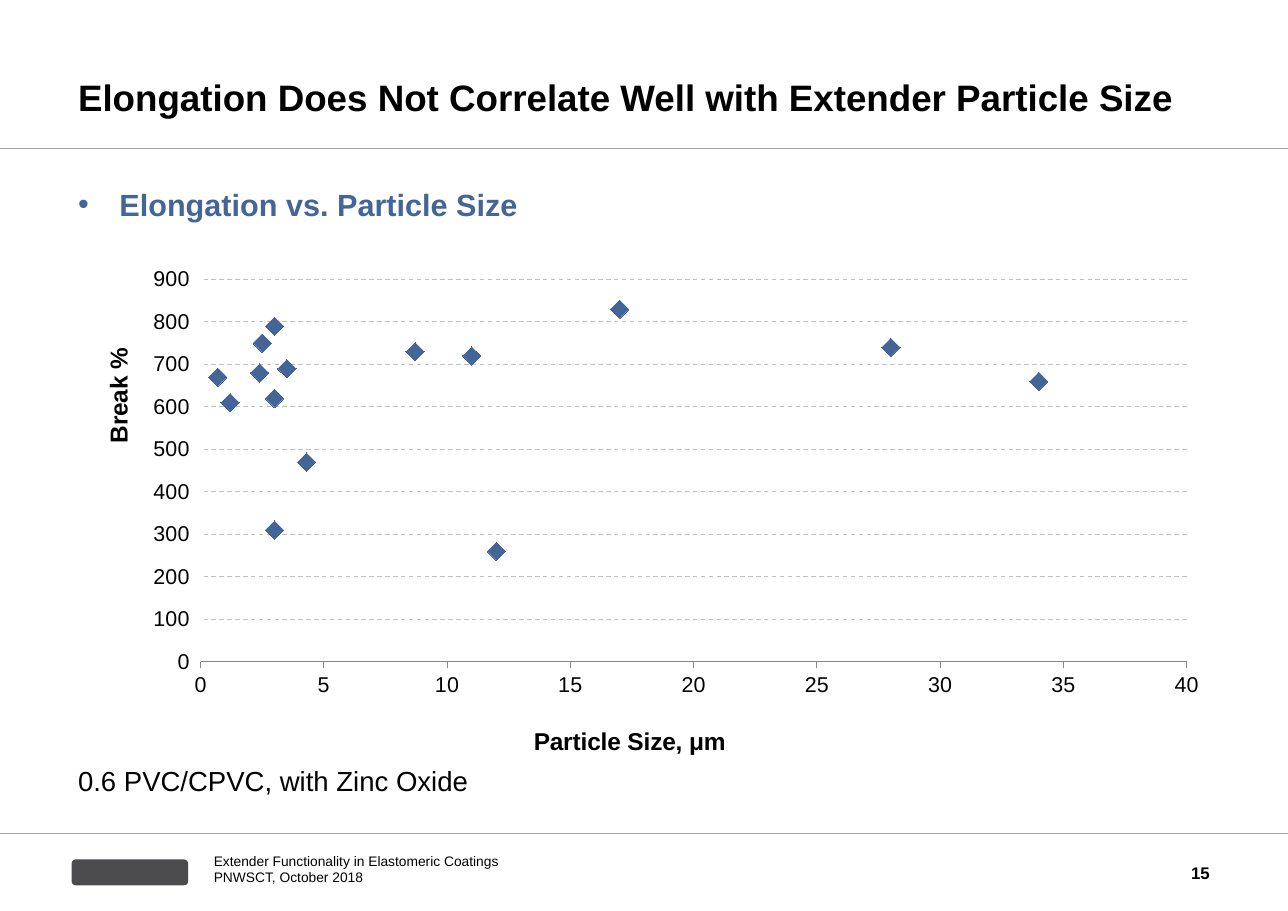
"""Build the slide on elongation against extender particle size."""
from dataclasses import dataclass

from lxml.etree import SubElement
from pptx import Presentation
from pptx.chart.data import XyChartData
from pptx.dml.color import RGBColor
from pptx.enum.chart import XL_CHART_TYPE as ChartType, XL_MARKER_STYLE as Marker, XL_TICK_MARK as Tick
from pptx.enum.dml import MSO_LINE_DASH_STYLE as Dash
from pptx.enum.shapes import MSO_CONNECTOR as Connector, MSO_SHAPE as Shape
from pptx.enum.text import MSO_ANCHOR as Anchor, MSO_AUTO_SIZE as AutoSize, PP_ALIGN as Align
from pptx.oxml import parse_xml
from pptx.oxml.ns import nsdecls, qn
from pptx.util import Cm, Pt

TITLE = "Elongation Does Not Correlate Well with Extender Particle Size"
SUBTITLE = "Elongation vs. Particle Size"
NOTE = "0.6 PVC/CPVC, with Zinc Oxide"
FOOTER = ["Extender Functionality in Elastomeric Coatings", "PNWSCT, October 2018"]
PAGE_NUMBER = "15"
SIZE_AXIS = {"title": "Particle Size, μm", "max": 40, "step": 5, "format": "General", "title_at": (0.4, 0.92)}
BREAK_AXIS = {"title": "Break %", "max": 900, "step": 100, "format": "0", "title_at": (0.02, 0.16)}
MEASUREMENTS = [
    (0.7, 670), (3, 310), (4.3, 470), (12, 260), (3, 790),
    (11, 720), (2.4, 680), (8.7, 730), (17, 830), (34, 660),
    (2.5, 750), (28, 740), (1.2, 610), (3, 620), (3.5, 690),
]
PLOT_AREA = (0.11, 0.03, 0.87, 0.77)


@dataclass(frozen=True)
class Theme:
    """Hold the colours and type sizes of the slide."""

    font: str = "Arial"
    ink: RGBColor = RGBColor(0, 0, 0)
    accent: RGBColor = RGBColor(0x43, 0x65, 0x97)
    rule: RGBColor = RGBColor(0xA6, 0xA6, 0xA6)
    grid: RGBColor = RGBColor(0xBF, 0xBF, 0xBF)
    axis: RGBColor = RGBColor(0x86, 0x86, 0x86)
    emblem: RGBColor = RGBColor(0x4B, 0x4B, 0x4D)
    title: int = 24
    subtitle: int = 20
    note: int = 18
    axis_title: int = 16
    chart: int = 14
    number: int = 11
    footer: int = 9


THEME = Theme()
PAGE_WIDTH, PAGE_HEIGHT = 29.7, 21
MARGIN = 1.8
CONTENT_WIDTH = PAGE_WIDTH - 2 * MARGIN
RULES = [(3.43, 0.75), (19.2, 0.5)]


def set_font(font, size, bold=False, color=THEME.ink):
    """Apply the theme font to a font object."""
    font.name, font.size, font.bold = THEME.font, Pt(size), bold
    font.color.rgb = color


def place(part, left, top, width, height):
    """Move a part to a position given in centimetres."""
    part.left, part.top, part.width, part.height = map(Cm, (left, top, width, height))


def write(part, lines, size, bold=False, color=THEME.ink, anchor=Anchor.MIDDLE, align=Align.LEFT, spacing=None):
    """Fill a text part without insets."""
    frame = part.text_frame
    frame.text = "\n".join(lines)
    frame.word_wrap, frame.auto_size, frame.vertical_anchor = True, AutoSize.NONE, anchor
    frame.margin_left = frame.margin_top = frame.margin_right = frame.margin_bottom = 0
    for paragraph in frame.paragraphs:
        paragraph.alignment = align
        paragraph.space_before = Pt(0)
        if spacing:
            paragraph.line_spacing = Pt(spacing)
        set_font(paragraph.font, size, bold, color)


def add_text(slide, box, lines, size, **style):
    """Add a text box."""
    write(slide.shapes.add_textbox(*map(Cm, box)), lines, size, **style)


def set_layout(parent, index, position, target=""):
    """Give a chart part a manual layout."""
    for old in parent.findall(qn("c:layout")):
        parent.remove(old)
    layout = parse_xml(f"<c:layout {nsdecls('c')}><c:manualLayout/></c:layout>")
    settings = [("layoutTarget", target)] if target else []
    settings += [("xMode", "edge"), ("yMode", "edge"), *zip("xywh", position)]
    for tag, value in settings:
        SubElement(layout[0], qn(f"c:{tag}")).set("val", str(value))
    parent.insert(index, layout)


def style_axis(axis, content):
    """Set scale, labels and title of an axis."""
    axis.minimum_scale, axis.maximum_scale, axis.major_unit = 0, content["max"], content["step"]
    axis.major_tick_mark, axis.minor_tick_mark = Tick.OUTSIDE, Tick.NONE
    axis.tick_labels.number_format = content["format"]
    axis.tick_labels.number_format_is_linked = False
    set_font(axis.tick_labels.font, THEME.chart)
    heading = axis.axis_title.text_frame
    heading.text = content["title"]
    set_font(heading.paragraphs[0].font, THEME.axis_title, True)
    set_layout(axis.axis_title._element, 1, content["title_at"])
    return heading


def add_scatter(slide):
    """Add the scatter chart."""
    data = XyChartData()
    points = data.add_series("Elongation")
    for particle_size, elongation in MEASUREMENTS:
        points.add_data_point(particle_size, elongation)
    box = map(Cm, (1.75, 6.1, 26.14, 11.48))
    chart = slide.shapes.add_chart(ChartType.XY_SCATTER, *box, data).chart
    chart.has_title = chart.has_legend = False
    set_font(chart.font, THEME.chart)
    plot = chart.plots[0]
    plot.vary_by_categories = False
    set_layout(plot._element.getparent(), 0, PLOT_AREA, "inner")

    series = plot.series[0]
    series.smooth = False
    series.format.line.fill.background()
    series.marker.style, series.marker.size = Marker.DIAMOND, 12
    marker = series.marker.format
    marker.fill.solid()
    marker.fill.fore_color.rgb = marker.line.color.rgb = THEME.accent

    style_axis(chart.category_axis, SIZE_AXIS)
    chart.category_axis.has_major_gridlines = False
    chart.category_axis.format.line.color.rgb = THEME.axis
    break_heading = style_axis(chart.value_axis, BREAK_AXIS)
    break_heading._txBody.bodyPr.set("rot", "-5400000")
    break_heading._txBody.bodyPr.set("vert", "horz")
    chart.value_axis.format.line.fill.background()
    grid = chart.value_axis.major_gridlines.format.line
    grid.color.rgb, grid.width, grid.dash_style = THEME.grid, Pt(0.75), Dash.DASH


def add_rule(slide, top, weight):
    """Add a line across the whole page."""
    rule = slide.shapes.add_connector(Connector.STRAIGHT, 0, Cm(top), Cm(PAGE_WIDTH), Cm(top))
    rule.line.color.rgb, rule.line.width = THEME.rule, Pt(weight)
    SubElement(rule._element.spPr, qn("a:effectLst"))


def add_emblem(slide):
    """Add the plain emblem block in the footer."""
    emblem = slide.shapes.add_shape(Shape.ROUNDED_RECTANGLE, *map(Cm, (1.65, 19.81, 2.69, 0.6)))
    emblem.shadow.inherit = False
    emblem.fill.solid()
    emblem.fill.fore_color.rgb = THEME.emblem
    emblem.line.fill.background()


def main():
    """Build and save the slide."""
    deck = Presentation()
    deck.slide_width, deck.slide_height = Cm(PAGE_WIDTH), Cm(PAGE_HEIGHT)
    slide = deck.slides.add_slide(deck.slide_layouts[1])
    for top, weight in RULES:
        add_rule(slide, top, weight)
    add_emblem(slide)
    add_text(slide, (4.93, 19.63, 12.47, 0.8), FOOTER, THEME.footer, spacing=10.4)
    add_text(slide, (25.63, 19.53, 2.27, 1.2), [PAGE_NUMBER], THEME.number, bold=True, align=Align.RIGHT)

    title, subtitle = slide.shapes.title, slide.placeholders[1]
    place(title, MARGIN, 0.53, CONTENT_WIDTH, 2.2)
    write(title, [TITLE], THEME.title, bold=True, anchor=Anchor.BOTTOM)
    place(subtitle, MARGIN, 4.29, 12.9, 1.37)
    properties = subtitle.text_frame.paragraphs[0]._p.get_or_add_pPr()
    properties.set("marL", "0")
    properties.set("indent", "0")
    SubElement(properties, qn("a:buNone"))
    write(subtitle, [SUBTITLE], THEME.subtitle, bold=True, color=THEME.accent, anchor=Anchor.TOP)

    add_scatter(slide)
    add_text(slide, (MARGIN, 17.58, CONTENT_WIDTH, 0.81), [NOTE], THEME.note)
    deck.save("out.pptx")


if __name__ == "__main__":
    main()
